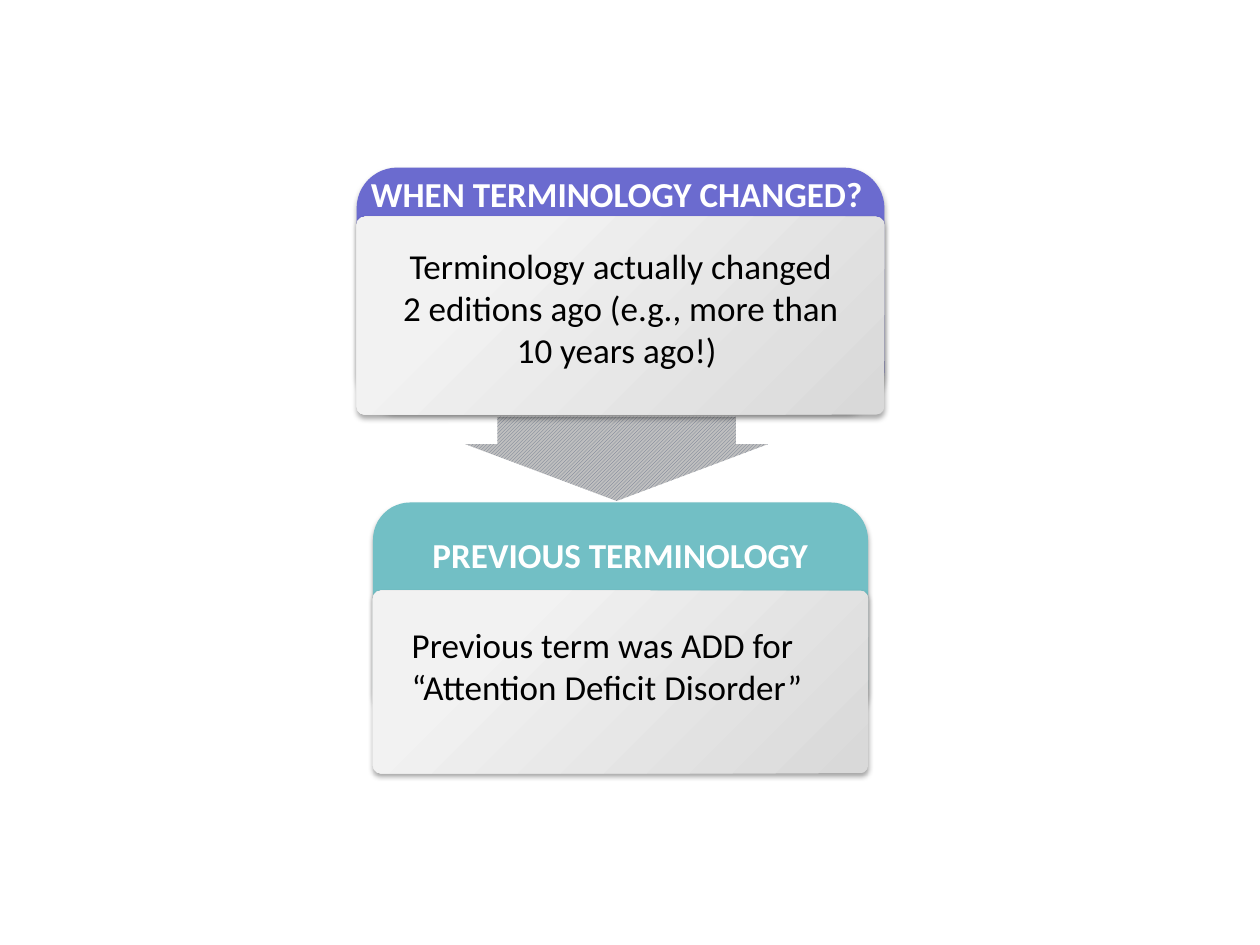
from lxml import etree
from pptx import Presentation
from pptx.dml.color import RGBColor
from pptx.enum.dml import MSO_PATTERN
from pptx.enum.shapes import MSO_SHAPE
from pptx.enum.text import PP_ALIGN
from pptx.oxml.ns import qn
from pptx.util import Cm, Pt

ROUND = MSO_SHAPE.ROUNDED_RECTANGLE
ARROW = MSO_SHAPE.RIGHT_ARROW
HATCH = MSO_PATTERN.LIGHT_UPWARD_DIAGONAL
LEFT, CENTER = PP_ALIGN.LEFT, PP_ALIGN.CENTER


def rgb(code):
    return RGBColor.from_string(code)


def add_form(slide, kind, box, adj=()):
    """Add a preset shape without line or shadow."""
    form = slide.shapes.add_shape(kind, *map(Cm, box))
    form.shadow.inherit = False
    form.line.fill.background()
    for i, value in enumerate(adj):
        form.adjustments[i] = value
    return form


def add_shade(form):
    """Cast a soft shadow straight down."""
    effects = form._element.spPr.find(qn("a:effectLst"))
    shade = etree.SubElement(
        effects, qn("a:outerShdw"), blurRad=str(Pt(3.1)), dist=str(Pt(1.8)),
        dir="5400000", rotWithShape="0")
    color = etree.SubElement(shade, qn("a:srgbClr"), val="000000")
    etree.SubElement(color, qn("a:alpha"), val="35000")


def add_text(slide, text, box, color="000000", bold=False, align=LEFT, after=0):
    frame = slide.shapes.add_textbox(*map(Cm, box)).text_frame
    frame.word_wrap = True
    para = frame.paragraphs[0]
    para.alignment = align
    para.space_after = Pt(after)
    run = para.add_run()
    run.text = text
    font = run.font
    font.name, font.size, font.bold = "Calibri", Pt(20), bold
    font.color.rgb = rgb(color)


def add_head(slide, box, color):
    head = add_form(slide, ROUND, box)
    head.fill.solid()
    head.fill.fore_color.rgb = rgb(color)
    add_shade(head)


def add_panel(slide, box):
    panel = add_form(slide, ROUND, box, [0.042])
    fill = panel.fill
    fill.gradient()
    fill.gradient_angle = 135
    stops = zip(fill.gradient_stops, [(0.01, "D9D9D9"), (0.77, "F2F2F2")])
    for stop, (place, color) in stops:
        stop.position = place
        stop.color.rgb = rgb(color)
    add_shade(panel)


def add_arrow(slide):
    arrow = add_form(slide, ARROW, (11.58, 6.2, 1.7, 6.1), [0.788, 0.673])
    arrow.rotation = 90
    arrow.fill.patterned()
    arrow.fill.pattern = HATCH
    arrow.fill.fore_color.rgb = rgb("68748B")
    arrow.fill.back_color.rgb = rgb("BFBFBF")


def add_title(slide, text, box):
    add_text(slide, text, box, color="FFFFFF", bold=True, align=CENTER, after=6)


def main():
    deck = Presentation()
    deck.slide_width, deck.slide_height = Cm(25.4), Cm(19.05)
    slide = deck.slides.add_slide(deck.slide_layouts[6])

    add_arrow(slide)

    add_head(slide, (7.19, 3.38, 10.64, 4.9), "6B6BCF")
    add_panel(slide, (7.19, 4.37, 10.64, 3.99))
    add_text(slide, "Terminology actually changed 2 editions ago "
             "(e.g., more than 10 years ago!) ",
             (7.75, 4.8, 9.53, 2.82), align=CENTER)
    add_title(slide, "WHEN TERMINOLOGY CHANGED?", (7.19, 3.35, 10.49, 1.12))

    add_head(slide, (7.52, 10.13, 9.98, 4.5), "72BFC5")
    add_panel(slide, (7.52, 11.91, 9.98, 3.68))
    add_text(slide, "Previous term was ADD for “Attention Deficit Disorder”",
             (8.05, 12.45, 8.94, 2.18))
    add_title(slide, "PREVIOUS TERMINOLOGY", (7.82, 10.64, 9.37, 1.12))

    deck.save("out.pptx")


if __name__ == "__main__":
    main()
